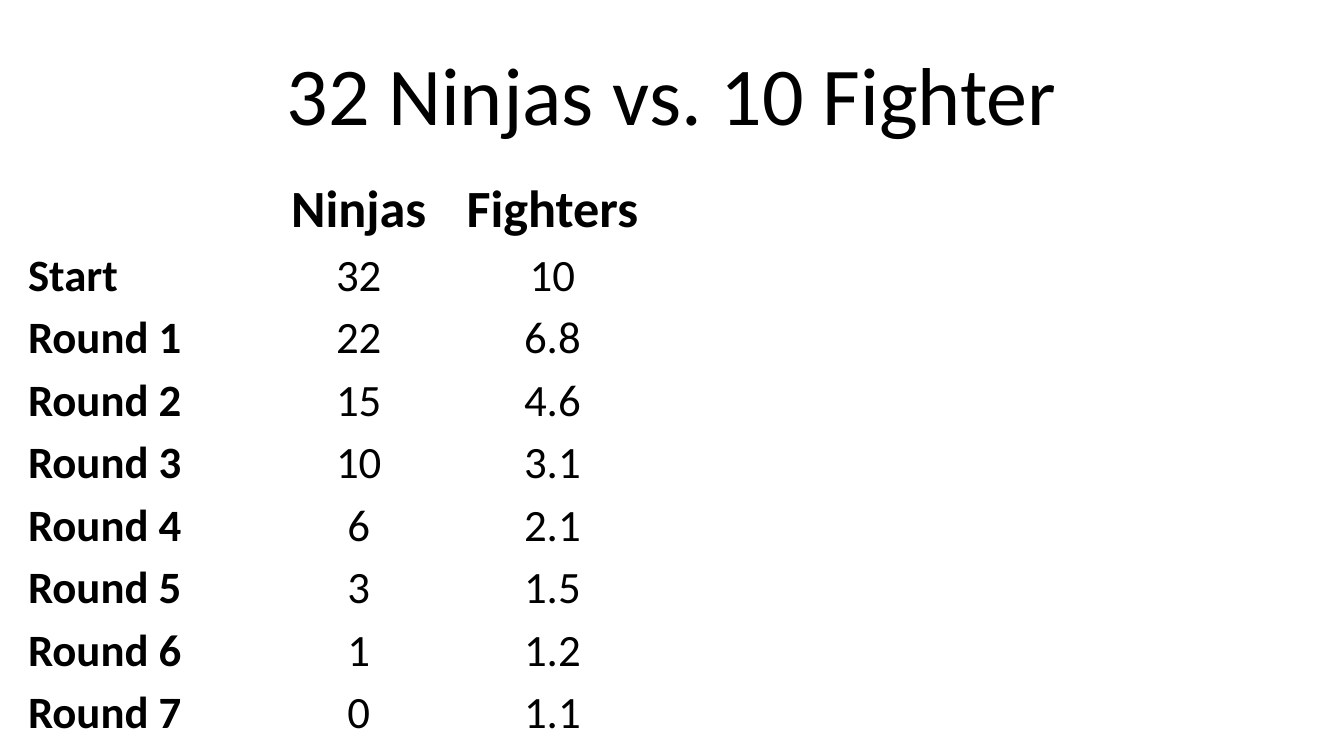
from pptx import Presentation
from pptx.dml.color import RGBColor
from pptx.enum.text import MSO_ANCHOR, PP_ALIGN
from pptx.util import Cm, Pt

BLACK = RGBColor(0, 0, 0)
FONT_NAME = "Calibri"
LEFT, CENTER = PP_ALIGN.LEFT, PP_ALIGN.CENTER
MIDDLE, BOTTOM = MSO_ANCHOR.MIDDLE, MSO_ANCHOR.BOTTOM

ROUNDS = [
    ("", "", "Ninjas", "Fighters"),
    ("Start", "", "32", "10"),
    ("Round 1", "", "22", "6.8"),
    ("Round 2", "", "15", "4.6"),
    ("Round 3", "", "10", "3.1"),
    ("Round 4", "", "6", "2.1"),
    ("Round 5", "", "3", "1.5"),
    ("Round 6", "", "1", "1.2"),
    ("Round 7", "", "0", "1.1"),
]
COLUMN_WIDTHS = [Cm(3.66), Cm(0.78), Cm(3.66), Cm(3.66)]
ROW_HEIGHT = Cm(1.18)
CELL_FORMAT = {
    "margin_left": Cm(0.02),
    "margin_right": Cm(0.02),
    "margin_top": Cm(0.02),
    "margin_bottom": Cm(0),
    "vertical_anchor": BOTTOM,
}


def write_text(text_frame, text, size, bold, alignment):
    paragraph = text_frame.paragraphs[0]
    paragraph.alignment = alignment
    run = paragraph.add_run()
    run.text = text
    run.font.name = FONT_NAME
    run.font.size = Pt(size)
    run.font.bold = bold
    run.font.color.rgb = BLACK


presentation = Presentation()
presentation.slide_width = Cm(25.4)
presentation.slide_height = Cm(14.29)
slide = presentation.slides.add_slide(presentation.slide_layouts[5])

# Title
title = slide.shapes.title
title.left, title.top = Cm(1.27), Cm(0.57)
title.width, title.height = Cm(22.86), Cm(2.38)
title.text_frame.vertical_anchor = MIDDLE
write_text(title.text_frame, "32 Ninjas vs. 10 Fighter", 44, False, CENTER)

# Table of survivors after each round
table = slide.shapes.add_table(
    len(ROUNDS), len(COLUMN_WIDTHS), Cm(0.51), Cm(3.33),
    sum(COLUMN_WIDTHS), ROW_HEIGHT * len(ROUNDS),
).table
table.first_row = False
table.horz_banding = False
for column, width in zip(table.columns, COLUMN_WIDTHS):
    column.width = width

for row_index, values in enumerate(ROUNDS):
    table.rows[row_index].height = ROW_HEIGHT
    for column_index, value in enumerate(values):
        cell = table.cell(row_index, column_index)
        cell.fill.background()
        if not value:
            continue
        for name, setting in CELL_FORMAT.items():
            setattr(cell, name, setting)
        is_header = row_index == 0
        is_label = column_index == 0
        write_text(
            cell.text_frame, value, 28 if is_header else 24,
            is_header or is_label, LEFT if is_label else CENTER,
        )

presentation.save("out.pptx")
